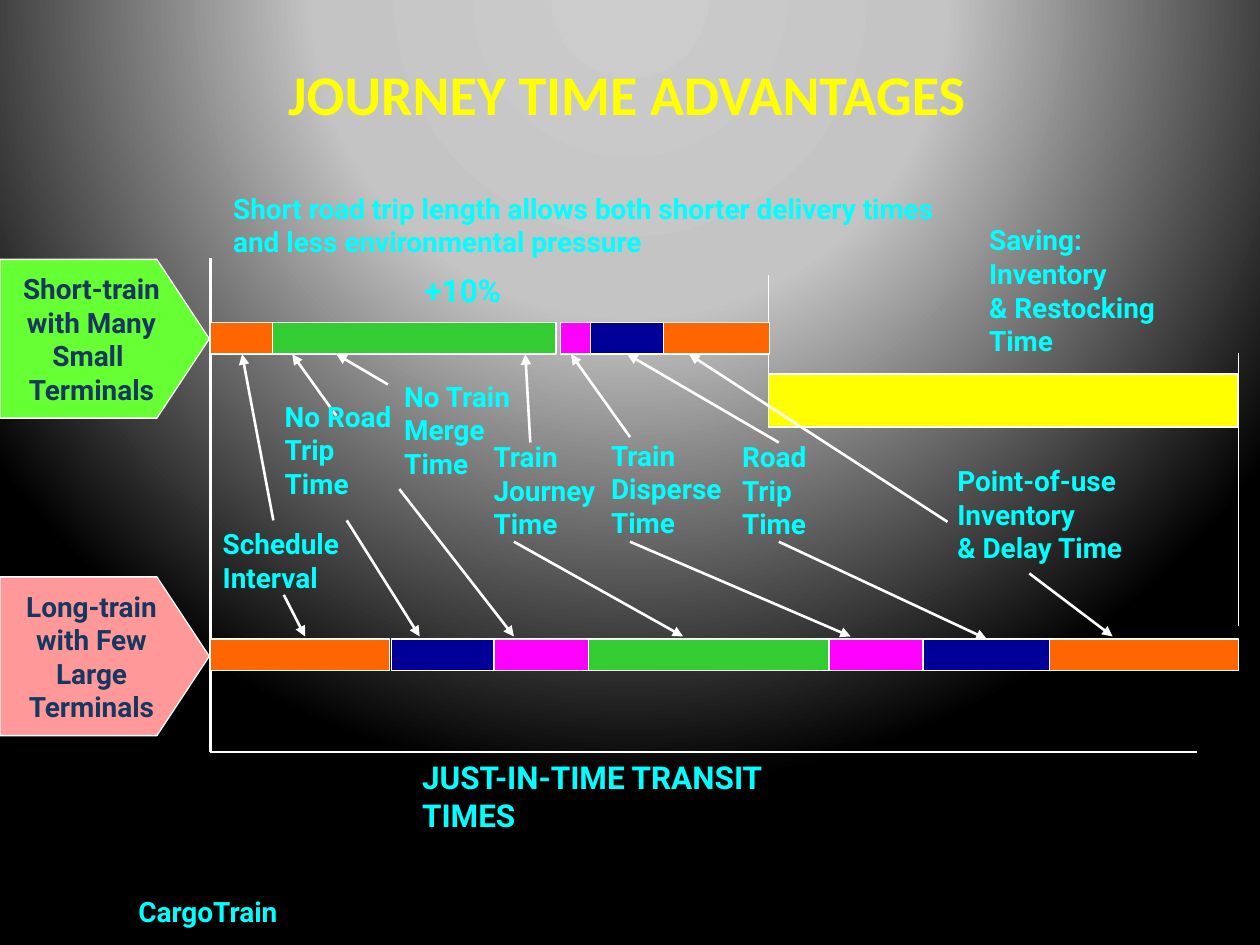
import pptx
import pptx.dml.color
import pptx.enum.shapes
import pptx.enum.text
import pptx.oxml
import pptx.oxml.ns
import pptx.util
from lxml import etree

Cm = pptx.util.Cm
Pt = pptx.util.Pt
SHAPE = pptx.enum.shapes.MSO_SHAPE
ALIGN = pptx.enum.text.PP_ALIGN
ANCHOR = pptx.enum.text.MSO_ANCHOR
qn = pptx.oxml.ns.qn

WHITE, CYAN, YELLOW, DARK = "FFFFFF", "00FFFF", "FFFF00", "17375E"
ORANGE, GREEN, MAGENTA, NAVY = "FF6600", "33CC33", "FF00FF", "000099"


def color(hex_string):
    return pptx.dml.color.RGBColor.from_string(hex_string)


class Deck:
    """Holds the text style and the current slide."""

    font = "Roboto"
    size = 16

    def __init__(self, prs):
        self.s = prs.slides.add_slide(prs.slide_layouts[5])

    def background(self, stops):
        """Fill the slide with a circular gradient of (percent, colour) stops."""
        gs = "".join(f'<a:gs pos="{pos * 1000}"><a:srgbClr val="{c}"/></a:gs>'
                     for pos, c in stops)
        bg = pptx.oxml.parse_xml(
            f'<p:bg {pptx.oxml.ns.nsdecls("p", "a")}><p:bgPr>'
            f'<a:gradFill rotWithShape="1"><a:gsLst>{gs}</a:gsLst>'
            '<a:path path="circle"><a:fillToRect l="50000" t="-80000" '
            'r="50000" b="180000"/></a:path></a:gradFill><a:effectLst/>'
            '</p:bgPr></p:bg>')
        self.s.element.cSld.insert(0, bg)

    def set_text(self, tf, text, hex_string, size=None, font=None, align=ALIGN.LEFT, wrap=False):
        tf.text = text
        tf.word_wrap = wrap
        for p in tf.paragraphs:
            p.alignment = align
            for r in p.runs:
                r.font.name = font or self.font
                r.font.size = Pt(size or self.size)
                r.font.bold = True
                r.font.color.rgb = color(hex_string)

    def title(self, text, x, y, w, h):
        sp = self.s.shapes.title
        sp.left, sp.top, sp.width, sp.height = Cm(x), Cm(y), Cm(w), Cm(h)
        tf = sp.text_frame
        self.set_text(tf, text, YELLOW, 32, "Calibri", ALIGN.CENTER)
        tf.auto_size = pptx.enum.text.MSO_AUTO_SIZE.NONE
        tf.vertical_anchor = ANCHOR.MIDDLE

    def label(self, text, x, y, w, h, size=None, wrap=False):
        sp = self.s.shapes.add_textbox(Cm(x), Cm(y), Cm(w), Cm(h))
        self.set_text(sp.text_frame, text, CYAN, size, wrap=wrap)

    def box(self, x, y, w, h, fill, kind=SHAPE.RECTANGLE):
        sp = self.s.shapes.add_shape(kind, Cm(x), Cm(y), Cm(w), Cm(h))
        sp.shadow.inherit = False
        sp.fill.solid()
        sp.fill.fore_color.rgb = color(fill)
        sp.line.color.rgb = color(WHITE)
        sp.line.width = Pt(0.75)
        return sp

    def pentagon(self, text, y, fill):
        sp = self.box(0, y, 4.22, 3.2, fill, SHAPE.PENTAGON)
        sp.adjustments[0] = 0.33
        sp.text_frame.vertical_anchor = ANCHOR.MIDDLE
        self.set_text(sp.text_frame, text, DARK, align=ALIGN.CENTER)

    def line(self, x1, y1, x2, y2, width=1.5):
        c = self.s.shapes.add_connector(
            pptx.enum.shapes.MSO_CONNECTOR.STRAIGHT, Cm(x1), Cm(y1), Cm(x2), Cm(y2))
        c.line.color.rgb = color(WHITE)
        c.line.width = Pt(width)
        etree.SubElement(c.element.spPr, qn("a:effectLst"))
        return c

    def arrow(self, x1, y1, x2, y2, target=None, site=0):
        c = self.line(x1, y1, x2, y2)
        ln = c.element.spPr.find(qn("a:ln"))
        etree.SubElement(ln, qn("a:tailEnd"), type="triangle")
        if target is not None:
            c.end_connect(target, site)


def main():
    prs = pptx.Presentation()
    prs.slide_width, prs.slide_height = Cm(25.4), Cm(19.05)
    deck = Deck(prs)
    deck.background([(0, "CCCCCC"), (40, "C4C4C4"), (100, "000000")])
    deck.title("JOURNEY TIME ADVANTAGES", 5.49, 1.07, 14.3, 1.63)

    # Axes and saving limits
    deck.line(4.24, 5.21, 4.24, 15.16)
    deck.line(4.24, 15.16, 24.13, 15.16)
    deck.line(15.49, 5.54, 15.49, 8.28, 1)
    deck.line(24.97, 12.62, 24.97, 7.11, 0.75)

    # Time bars: (left, width, colour)
    short_y, long_y, bar_h = 6.5, 12.88, 0.64
    short_bar = [(4.24, 1.47, ORANGE), (5.49, 5.72, GREEN), (11.3, 0.64, MAGENTA),
                 (11.91, 1.47, NAVY), (13.37, 2.15, ORANGE)]
    long_bar = [(4.24, 3.61, ORANGE), (7.9, 2.11, NAVY), (9.96, 1.9, MAGENTA),
                (11.86, 4.88, GREEN), (16.71, 1.9, MAGENTA), (18.62, 2.54, NAVY),
                (21.16, 3.81, ORANGE)]
    short_parts = [deck.box(x, short_y, w, bar_h, c) for x, w, c in short_bar]
    long_parts = [deck.box(x, long_y, w, bar_h, c) for x, w, c in long_bar]
    deck.box(15.49, 7.54, 9.47, 1.07, YELLOW)

    # Arrows up to the short-train bar: (start x, start y, tip x, joined part)
    for x, y, tip, part in [
            (5.51, 10.49, 4.88, None), (6.78, 8.38, 5.89, None),
            (7.82, 7.75, 6.78, None), (10.69, 8.92, 10.59, None),
            (12.7, 8.81, 11.51, None), (15.7, 8.92, 12.7, short_parts[3]),
            (19.1, 10.52, 13.89, None)]:
        deck.arrow(x, y, tip, short_y + bar_h, part, 2)

    # Arrows down to the long-train bar
    for x, y, tip, part in [
            (5.72, 11.99, 6.15, None), (6.99, 10.49, 8.46, None),
            (8.05, 9.86, 10.36, None), (10.36, 10.92, 13.77, None),
            (12.7, 10.92, 17.15, None), (15.7, 10.92, 19.89, long_parts[5]),
            (20.75, 11.56, 22.43, None)]:
        deck.arrow(x, y, tip, long_y - 0.05, part, 0)

    # Stage labels
    for text, x, y, w, h in [
            ("Schedule\nInterval", 4.24, 10.49, 2.9, 1.63),
            ("No Road\nTrip\nTime", 5.49, 7.92, 2.84, 2.29),
            ("No Train\nMerge\nTime", 7.9, 7.52, 2.77, 2.29),
            ("Train\nJourney\nTime", 9.7, 8.74, 2.84, 2.29),
            ("Train\nDisperse\nTime", 12.07, 8.71, 2.74, 2.29),
            ("Road\nTrip\nTime", 14.71, 8.74, 1.98, 2.29),
            ("Point-of-use\nInventory\n& Delay Time", 19.05, 9.22, 4.04, 2.29),
            ("Saving:\nInventory\n& Restocking\nTime", 19.69, 4.37, 3.91, 2.97),
            ("Short road trip length allows both shorter delivery times\n"
             "and less environmental pressure", 4.45, 3.73, 15.49, 1.63),
            ("CargoTrain", 2.54, 17.91, 3.43, 0.94)]:
        deck.label(text, x, y, w, h)
    deck.label("+10%", 8.31, 5.33, 2.06, 1.02, 18)
    deck.label("JUST-IN-TIME TRANSIT TIMES", 8.26, 15.16, 9.07, 1.02, 18, wrap=True)

    # Train types
    deck.pentagon("Short-train\nwith Many\nSmall \nTerminals", 5.23, "66FF33")
    deck.pentagon("Long-train\nwith Few\nLarge\nTerminals", 11.63, "FF9999")

    prs.save("out.pptx")


if __name__ == "__main__":
    main()
